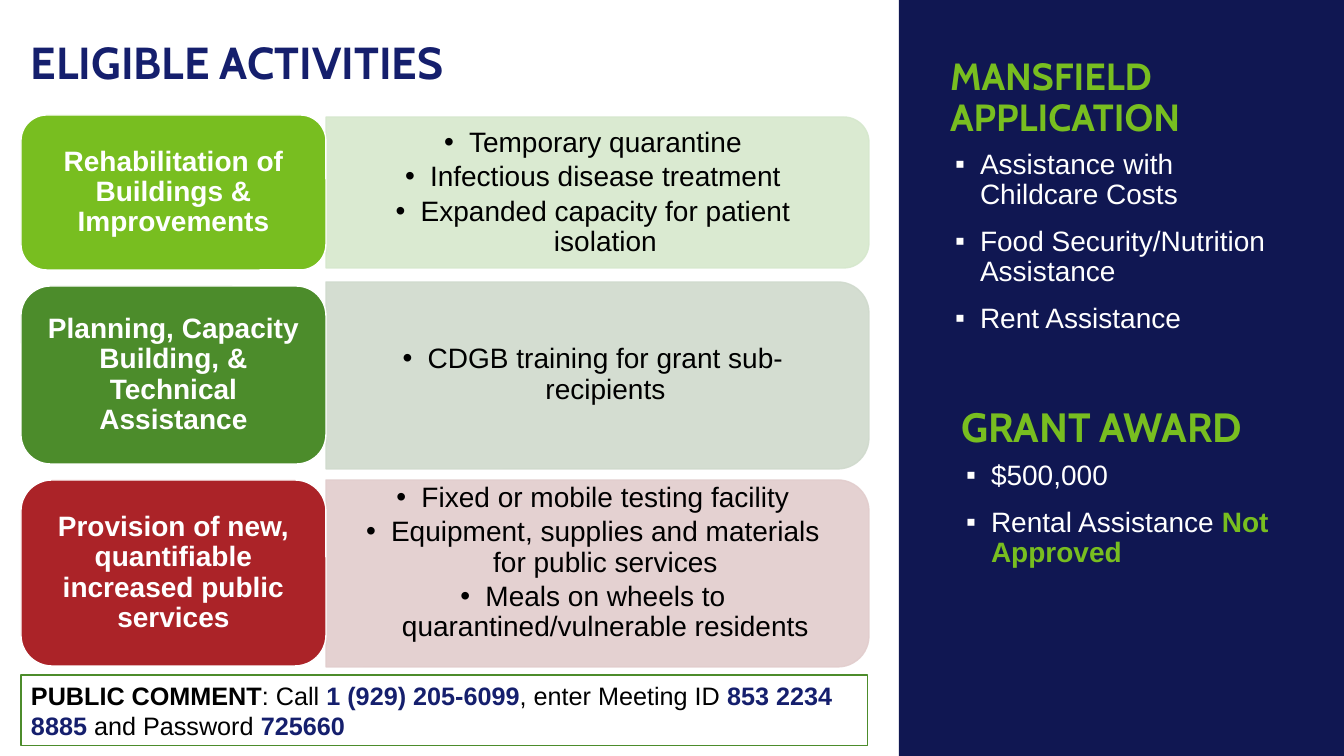
"""Build the slide of eligible activities with its grant sidebar."""
from dataclasses import dataclass

from lxml.etree import SubElement
from pptx import Presentation
from pptx.dml.color import RGBColor
from pptx.enum.shapes import MSO_SHAPE as Preset
from pptx.enum.text import MSO_ANCHOR as Anchor, MSO_AUTO_SIZE as AutoSize, PP_ALIGN as Align
from pptx.oxml.ns import qn
from pptx.util import Emu, Pt

EMU_PER_INCH = 914400
PX_PER_INCH = 100.8
NAVY = RGBColor(0x10, 0x17, 0x52)
BLUE = RGBColor(0x15, 0x1F, 0x6D)
LIME = RGBColor(0x78, 0xBE, 0x20)
GREEN = RGBColor(0x4C, 0x8C, 0x2B)
RED = RGBColor(0xAB, 0x23, 0x28)
PALE_LIME = RGBColor(0xD6, 0xE8, 0xCD)
PALE_GREEN = RGBColor(0xD0, 0xDA, 0xCD)
PALE_RED = RGBColor(0xE2, 0xCD, 0xCD)
WHITE = RGBColor(0xFF, 0xFF, 0xFF)
BLACK = RGBColor(0, 0, 0)
MARGIN = 21
LABEL_WIDTH = 305
PANEL_LEFT, PANEL_WIDTH = 326, 543
SIDE_WIDTH = 345


@dataclass(frozen=True)
class Frame:
    left: int
    top: int
    width: int
    height: int

    def emu(self):
        return [px(n) for n in (self.left, self.top, self.width, self.height)]


@dataclass(frozen=True)
class Span:
    text: str
    color: RGBColor
    bold: bool = False


@dataclass(frozen=True)
class Style:
    size: float
    font: str = "Arial"
    align: Align = Align.LEFT
    anchor: Anchor = Anchor.TOP
    insets: tuple[int, int] = (10, 5)
    spacing: float = 0.9
    before: float = 0
    after: float = 0
    bullet: str = ""
    indent: int = 0


@dataclass(frozen=True)
class Activity:
    label: str
    label_top: int
    label_height: int
    color: RGBColor
    panel_top: int
    panel_height: int
    pale: RGBColor
    text_top: int
    text_height: int
    anchor: Anchor
    items: tuple[str, ...]


@dataclass(frozen=True)
class SideBlock:
    heading: str
    size: float
    left: int
    top: int
    items: tuple[tuple[Span, ...], ...]


ACTIVITIES = (
    Activity("Rehabilitation of Buildings & Improvements", 115, 155, LIME,
             117, 151, PALE_LIME, 125, 136, Anchor.MIDDLE,
             ("Temporary quarantine", "Infectious disease treatment",
              "Expanded capacity for patient isolation")),
    Activity("Planning, Capacity Building, & Technical Assistance", 286, 178, GREEN,
             282, 187, PALE_GREEN, 291, 168, Anchor.MIDDLE,
             ("CDGB training for grant sub-recipients",)),
    Activity("Provision of new, quantifiable increased public services", 480, 186, RED,
             480, 187, PALE_RED, 460, 197, Anchor.BOTTOM,
             ("Fixed or mobile testing facility",
              "Equipment, supplies and materials for public services",
              "Meals on wheels to quarantined/vulnerable residents")),
)
SIDE_BLOCKS = (
    SideBlock("MANSFIELD APPLICATION", 27, 940, 79,
              ((Span("Assistance with Childcare Costs", WHITE),),
               (Span("Food Security/Nutrition Assistance", WHITE),),
               (Span("Rent Assistance", WHITE),))),
    SideBlock("GRANT AWARD", 29.2, 951, 390,
              ((Span("$500,000", WHITE),),
               (Span("Rental Assistance ", WHITE), Span("Not Approved", LIME, True)))),
)
PUBLIC_COMMENT = (
    Span("PUBLIC COMMENT", BLACK, True), Span(": Call ", BLACK),
    Span("1 (929) 205-6099", BLUE, True), Span(", enter Meeting ID ", BLACK),
    Span("853 2234 8885", BLUE, True), Span(" and Password ", BLACK),
    Span("725660", BLUE, True),
)


def px(length: float) -> Emu:
    """Turn px into EMU."""
    return Emu(round(length * EMU_PER_INCH / PX_PER_INCH))


def add_bullet(para, style: Style) -> None:
    """Give a paragraph a hanging bullet."""
    props = para._p.get_or_add_pPr()
    props.set("marL", str(px(style.indent)))
    props.set("indent", str(-px(25)))
    SubElement(props, qn("a:buFont"), typeface="Arial")
    SubElement(props, qn("a:buChar"), char=style.bullet)


def write(box, paras, style: Style) -> None:
    """Fill a shape with paragraphs of spans."""
    frame = box.text_frame
    frame.word_wrap = True
    frame.auto_size = AutoSize.NONE
    frame.vertical_anchor = style.anchor
    frame.margin_left = frame.margin_right = px(style.insets[0])
    frame.margin_top = frame.margin_bottom = px(style.insets[1])
    for index, spans in enumerate(paras):
        para = frame.add_paragraph() if index else frame.paragraphs[0]
        if style.bullet:
            add_bullet(para, style)
        para.alignment = style.align
        para.line_spacing = style.spacing
        para.space_before = Pt(style.before if index else 0)
        para.space_after = Pt(style.after)
        for span in spans:
            run = para.add_run()
            run.text = span.text
            run.font.name = style.font
            run.font.size = Pt(style.size)
            run.font.bold = span.bold
            run.font.color.rgb = span.color


def add_text(slide, frame: Frame, paras, style: Style) -> None:
    """Add a text box."""
    write(slide.shapes.add_textbox(*frame.emu()), paras, style)


def add_block(slide, preset: Preset, frame: Frame, fill: RGBColor | None,
              line: RGBColor | None = None, weight: float = 1):
    """Add a flat preset shape."""
    block = slide.shapes.add_shape(preset, *frame.emu())
    block.shadow.inherit = False
    if fill is None:
        block.fill.background()
    else:
        block.fill.solid()
        block.fill.fore_color.rgb = fill
    if line is None:
        block.line.fill.background()
    else:
        block.line.color.rgb = line
        block.line.width = Pt(weight)
    return block


def add_panel(slide, frame: Frame, color: RGBColor) -> None:
    """Add a slightly transparent panel rounded on its right side."""
    shift = (frame.width - frame.height) / 2
    upright = Frame(frame.left + shift, frame.top - shift, frame.height, frame.width)
    panel = add_block(slide, Preset.ROUND_2_SAME_RECTANGLE, upright, color, color)
    panel.rotation = 90
    for tint in panel._element.spPr.iter(qn("a:srgbClr")):
        SubElement(tint, qn("a:alpha"), val="90000")


def add_activity(slide, activity: Activity) -> None:
    """Add one row: panel, bullets and coloured label."""
    add_panel(slide, Frame(PANEL_LEFT, activity.panel_top, PANEL_WIDTH, activity.panel_height),
              activity.pale)
    add_text(slide, Frame(PANEL_LEFT, activity.text_top, 534, activity.text_height),
             [(Span(item, BLACK),) for item in activity.items],
             Style(20, align=Align.CENTER, anchor=activity.anchor, insets=(27, 14),
                   after=3, bullet="•", indent=25))
    label = add_block(slide, Preset.ROUNDED_RECTANGLE,
                      Frame(MARGIN, activity.label_top, LABEL_WIDTH, activity.label_height),
                      activity.color, WHITE)
    write(label, [(Span(activity.label, WHITE, True),)],
          Style(20, align=Align.CENTER, anchor=Anchor.MIDDLE, insets=(8, 4)))


def add_side_block(slide, block: SideBlock) -> None:
    """Add a sidebar heading and its bullets."""
    add_text(slide, Frame(block.left, block.top, SIDE_WIDTH, 66),
             [(Span(block.heading, LIME, True),)],
             Style(block.size, font="Cabin", anchor=Anchor.BOTTOM))
    add_text(slide, Frame(block.left, block.top + 66, SIDE_WIDTH, 211), block.items,
             Style(20, before=12, bullet="▪", indent=30))


def main() -> None:
    """Build and save the deck."""
    deck = Presentation()
    deck.slide_width, deck.slide_height = px(1344), px(756)
    page = deck.slides.add_slide(deck.slide_layouts[5])
    title = page.shapes.title
    title.left, title.top, title.width, title.height = Frame(MARGIN, 16, 872, 78).emu()
    write(title, [(Span("ELIGIBLE ACTIVITIES", BLUE, True),)],
          Style(32, font="Cabin", anchor=Anchor.BOTTOM))
    add_block(page, Preset.RECTANGLE, Frame(899, 0, 445, 756), NAVY)
    for activity in ACTIVITIES:
        add_activity(page, activity)
    for block in SIDE_BLOCKS:
        add_side_block(page, block)
    comment = add_block(page, Preset.RECTANGLE, Frame(MARGIN, 675, 847, 71), None, GREEN, 0.75)
    write(comment, [PUBLIC_COMMENT], Style(18, spacing=1))
    deck.save("out.pptx")


if __name__ == "__main__":
    main()
